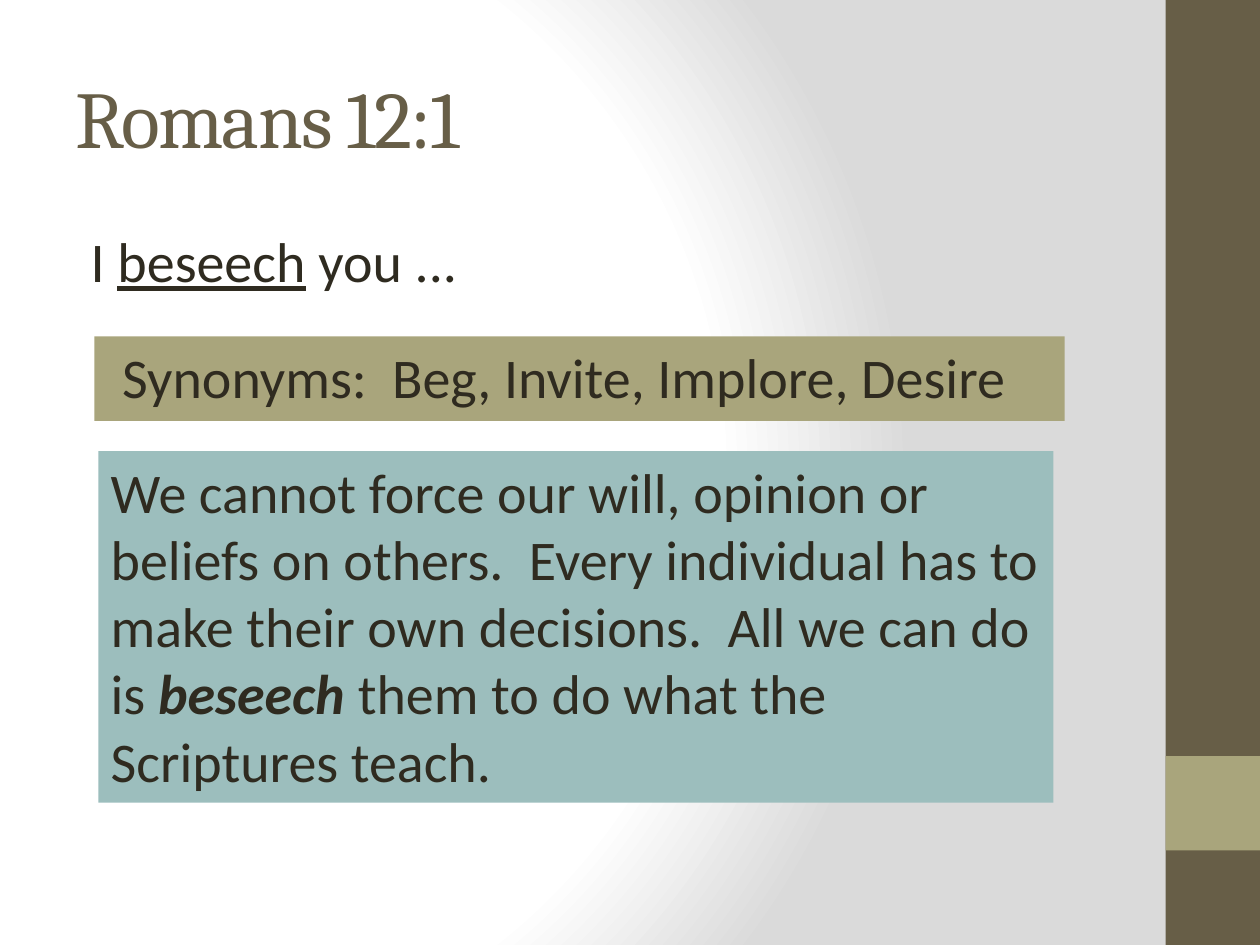
from dataclasses import dataclass, field
from typing import Optional

from lxml.etree import SubElement
from pptx import Presentation
from pptx.dml.color import RGBColor
from pptx.enum.shapes import MSO_SHAPE
from pptx.enum.text import MSO_ANCHOR
from pptx.oxml.ns import qn
from pptx.slide import Slide
from pptx.util import Inches, Pt

BROWN = RGBColor(0x67, 0x5E, 0x47)
OLIVE = RGBColor(0xA9, 0xA5, 0x7C)
TEAL = RGBColor(0x9C, 0xBE, 0xBD)
INK = RGBColor(0x2F, 0x2B, 0x20)
STOPS = ((0, "FFFFFF"), (75, "FFFFFF"), (100, "DADADA"))
FOCUS = {"l": 20, "t": 50, "r": 100, "b": 50}


@dataclass
class Run:
    text: str
    style: dict = field(default_factory=dict)


@dataclass
class Block:
    left: float
    top: float
    width: float
    height: float
    runs: tuple[Run, ...] = ()
    fill: Optional[RGBColor] = None
    inset: float = 0.1
    anchor: MSO_ANCHOR = MSO_ANCHOR.TOP
    font: str = "Calibri"
    size: int = 32
    color: RGBColor = INK
    track: int = 0


BLOCKS = (
    Block(9.25, 0, 0.75, 7.5, fill=BROWN),
    Block(9.25, 6, 0.75, 0.75, fill=OLIVE),
    Block(0.5, 0.3, 8.33, 1.25, (Run("Romans 12:1"),), anchor=MSO_ANCHOR.MIDDLE,
          font="Cambria", size=46, color=BROWN, track=-100),
    Block(0.75, 2.67, 7.7, 0.67, (Run("Synonyms:  Beg, Invite, Implore, Desire"),),
          OLIVE, inset=0.22),
    Block(0.5, 1.75, 8.33, 0.83,
          (Run("I "), Run("beseech", {"underline": True}), Run(" you ...")), inset=0.22),
    Block(0.78, 3.58, 7.58, 2.79,
          (Run("We cannot force our will, opinion or beliefs on others.  Every individual "
               "has to make their own decisions.  All we can do is "),
           Run("beseech", {"bold": True, "italic": True}),
           Run(" them to do what the Scriptures teach.")), TEAL),
)


def shade(slide: Slide) -> None:
    fill = slide.background.fill
    fill.solid()
    props = slide.element.cSld.find(qn("p:bg")).find(qn("p:bgPr"))
    props.remove(props.find(qn("a:solidFill")))
    grad = props.makeelement(qn("a:gradFill"), {"rotWithShape": "1"})
    props.insert(0, grad)
    stops = SubElement(grad, qn("a:gsLst"))
    for pos, color in STOPS:
        stop = SubElement(stops, qn("a:gs"), pos=str(pos * 1000))
        SubElement(stop, qn("a:srgbClr"), val=color)
    round_ = SubElement(grad, qn("a:path"), {"path": "circle"})
    SubElement(round_, qn("a:fillToRect"),
               {side: str(part * 1000) for side, part in FOCUS.items()})


def draw(slide: Slide, block: Block) -> None:
    area = [Inches(n) for n in (block.left, block.top, block.width, block.height)]
    if block.fill is None:
        shape = slide.shapes.add_textbox(*area)
    else:
        shape = slide.shapes.add_shape(MSO_SHAPE.RECTANGLE, *area)
        shape.shadow.inherit = False
        shape.fill.solid()
        shape.fill.fore_color.rgb = block.fill
        shape.line.fill.background()
    if block.runs:
        write(shape.text_frame, block)


def write(frame, block: Block) -> None:
    setup = {"word_wrap": True, "vertical_anchor": block.anchor,
             "margin_left": Inches(block.inset)}
    for name, value in setup.items():
        setattr(frame, name, value)
    line = frame.paragraphs[0]
    line.alignment = 1
    for part in block.runs:
        run = line.add_run()
        run.text = part.text
        look = {"name": block.font, "size": Pt(block.size)} | part.style
        for name, value in look.items():
            setattr(run.font, name, value)
        run.font.color.rgb = block.color
        if block.track:
            run.font._element.set("spc", str(block.track))


def main() -> None:
    deck = Presentation()
    deck.slide_width, deck.slide_height = Inches(10), Inches(7.5)
    slide = deck.slides.add_slide(deck.slide_layouts[6])
    shade(slide)
    for block in BLOCKS:
        draw(slide, block)
    deck.save("out.pptx")


if __name__ == "__main__":
    main()
